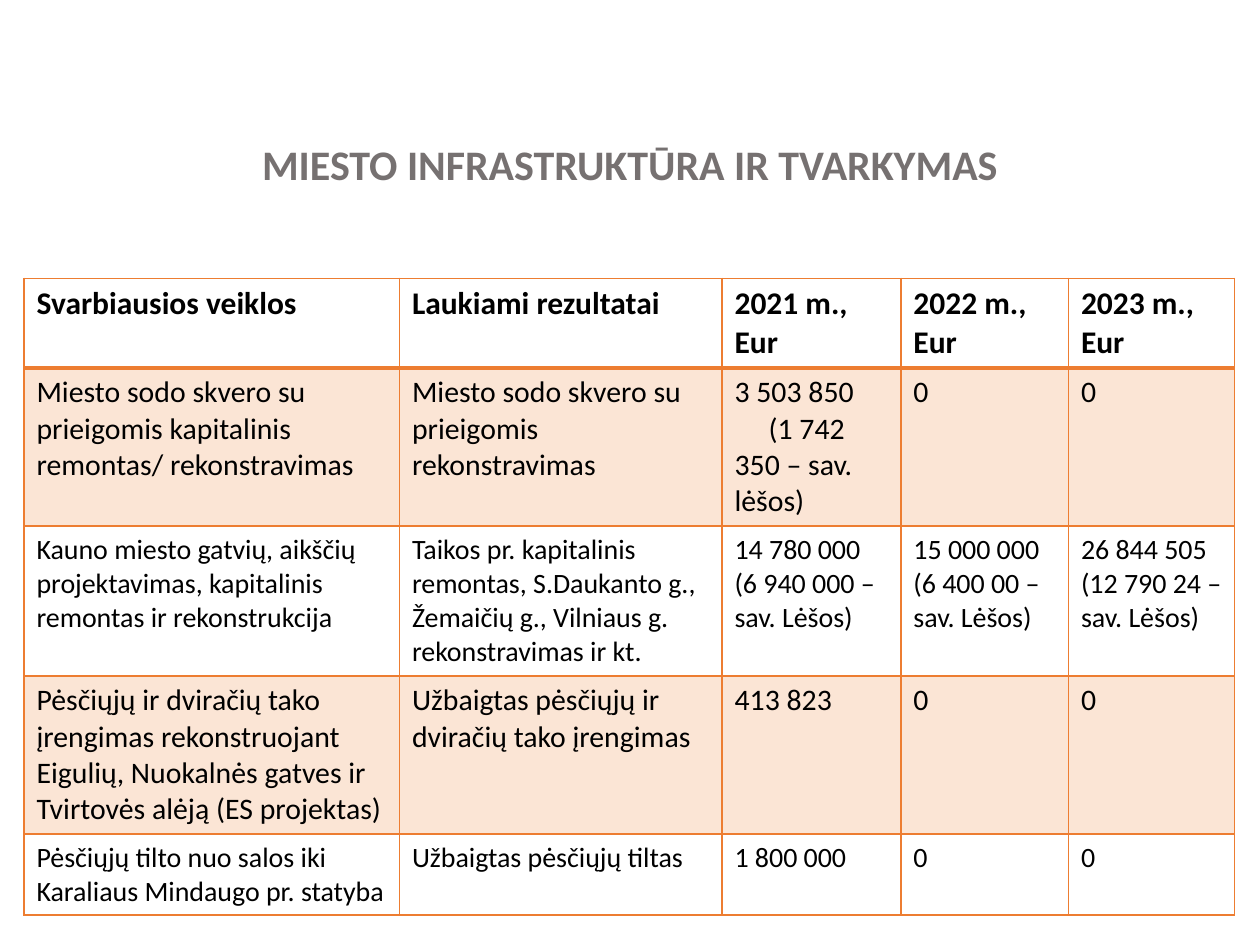
"""Build the slide on city infrastructure spending for 2021 to 2023."""
from lxml.etree import SubElement
from pptx import Presentation
from pptx.dml.color import RGBColor
from pptx.enum.text import MSO_ANCHOR, PP_ALIGN
from pptx.oxml.ns import qn
from pptx.util import Inches, Pt

ORANGE = RGBColor(0xED, 0x7D, 0x31)
GREY = RGBColor(0x76, 0x71, 0x71)
BLACK = RGBColor(0x00, 0x00, 0x00)
FONT = "Calibri"

COLUMN_WIDTHS = [2.98, 2.56, 1.42, 1.33, 1.32]
ROW_HEIGHTS = [0.71, 1.25, 1.19, 1.25, 0.64]
ROW_SIZES = [18, 17, 16, 17, 16]
ROWS = [
    ["Svarbiausios veiklos", "Laukiami rezultatai",
     "2021 m., Eur", "2022 m., Eur", "2023 m., Eur"],
    ["Miesto sodo skvero su prieigomis kapitalinis remontas/ rekonstravimas",
     "Miesto sodo skvero su prieigomis rekonstravimas",
     "3 503 850\n(1 742 350 – sav. lėšos)", "0", "0"],
    ["Kauno miesto gatvių, aikščių projektavimas, kapitalinis remontas ir rekonstrukcija",
     "Taikos pr. kapitalinis remontas, S.Daukanto g., Žemaičių g., Vilniaus g. "
     "rekonstravimas ir kt.",
     "14 780 000 (6 940 000 – sav. Lėšos)",
     "15 000 000 (6 400 00 – sav. Lėšos)",
     "26 844 505 (12 790 24 – sav. Lėšos)"],
    ["Pėsčiųjų ir dviračių tako įrengimas rekonstruojant Eigulių, Nuokalnės gatves ir "
     "Tvirtovės alėją (ES projektas)",
     "Užbaigtas pėsčiųjų ir dviračių tako įrengimas", "413 823", "0", "0"],
    ["Pėsčiųjų tilto nuo salos iki Karaliaus Mindaugo pr. statyba",
     "Užbaigtas pėsčiųjų tiltas", "1 800 000", "0", "0"],
]


def set_font(font, size, color, bold):
    font.name = FONT
    font.size = Pt(size)
    font.color.rgb = color
    font.bold = bold


def add_border(cell, side, width):
    line = SubElement(cell._tc.get_or_add_tcPr(), qn(f"a:ln{side}"), w=str(Pt(width)))
    fill = SubElement(line, qn("a:solidFill"))
    SubElement(fill, qn("a:srgbClr"), val=str(ORANGE))


presentation = Presentation()
presentation.slide_width = Inches(10)
presentation.slide_height = Inches(7.5)
slide = presentation.slides.add_slide(presentation.slide_layouts[5])

title = slide.shapes.title
title.left, title.top = Inches(0.69), Inches(0.94)
title.width, title.height = Inches(8.62), Inches(0.77)
title.text_frame.text = "MIESTO INFRASTRUKTŪRA IR TVARKYMAS"
title.text_frame.vertical_anchor = MSO_ANCHOR.MIDDLE
heading = title.text_frame.paragraphs[0]
heading.alignment = PP_ALIGN.CENTER
heading.line_spacing = 0.9
set_font(heading.runs[0].font, 24, GREY, True)

table = slide.shapes.add_table(
    len(ROWS), len(COLUMN_WIDTHS), Inches(0.19), Inches(2.21),
    Inches(sum(COLUMN_WIDTHS)), Inches(sum(ROW_HEIGHTS))).table
table.first_row = True
table.horz_banding = False
for column, width in zip(table.columns, COLUMN_WIDTHS):
    column.width = Inches(width)

for row_index, texts in enumerate(ROWS):
    table.rows[row_index].height = Inches(ROW_HEIGHTS[row_index])
    for column_index, text in enumerate(texts):
        cell = table.cell(row_index, column_index)
        cell.text_frame.text = text
        for paragraph in cell.text_frame.paragraphs:
            set_font(paragraph.runs[0].font, ROW_SIZES[row_index], BLACK, row_index == 0)
        for side in "LRTB":
            under_header = (row_index, side) in [(0, "B"), (1, "T")]
            add_border(cell, side, 2 if under_header else 1)
        if row_index % 2:
            cell.fill.solid()
            cell.fill.fore_color.rgb = ORANGE
            color = cell._tc.tcPr.find(qn("a:solidFill")).find(qn("a:srgbClr"))
            SubElement(color, qn("a:alpha"), val="20000")
        else:
            cell.fill.background()

municipal_share = table.cell(1, 2).text_frame.paragraphs[1]
municipal_share._p.get_or_add_pPr().set("indent", str(Inches(0.27)))

presentation.save("out.pptx")
